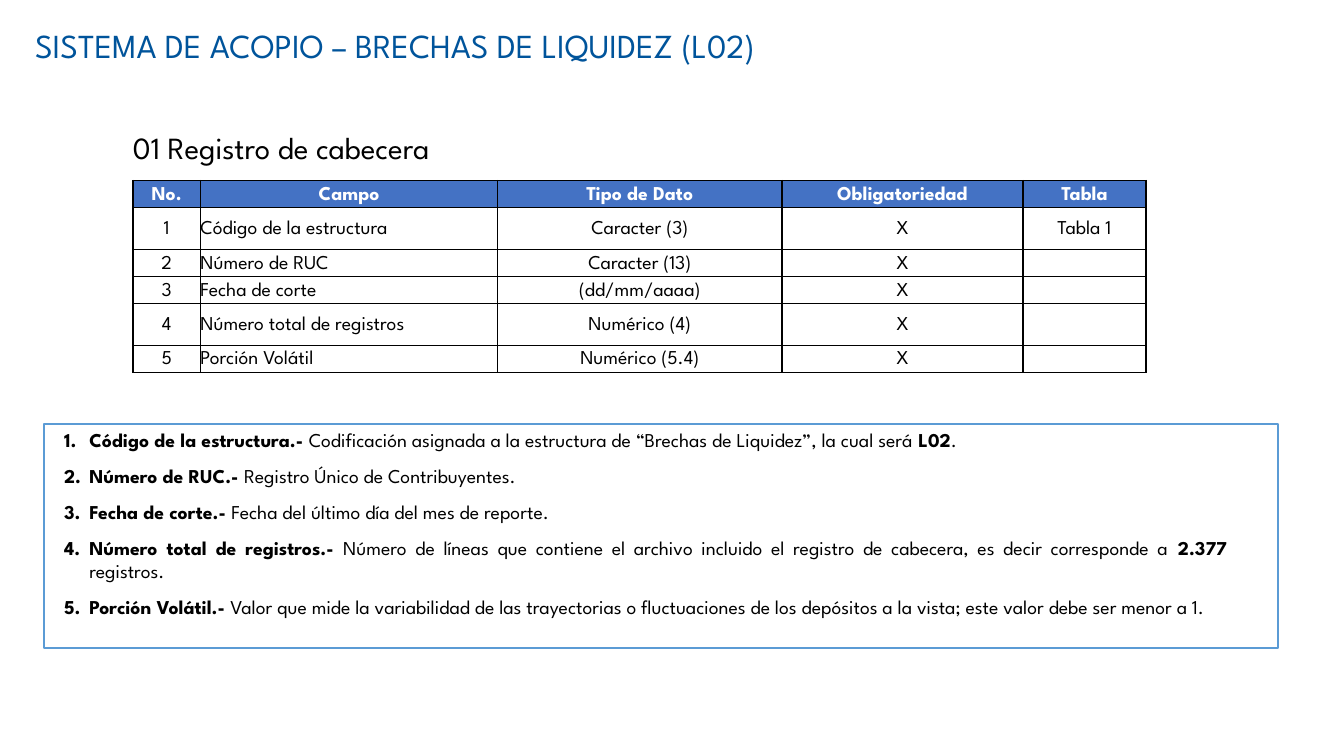
from lxml import etree
from pptx import Presentation
from pptx.dml.color import RGBColor
from pptx.enum.shapes import MSO_SHAPE
from pptx.enum.text import MSO_ANCHOR, PP_ALIGN
from pptx.oxml.ns import qn
from pptx.util import Pt

RECT = MSO_SHAPE.RECTANGLE
TOP, MIDDLE = MSO_ANCHOR.TOP, MSO_ANCHOR.MIDDLE
LEFT, CENTER, JUSTIFY = PP_ALIGN.LEFT, PP_ALIGN.CENTER, PP_ALIGN.JUSTIFY
FONT = "League Spartan"
COLORS = {"title": "00549B", "text": "000000", "head": "4472C4",
          "white": "FFFFFF", "frame": "5B9BD5"}

WIDTHS = [48.2, 212.4, 203, 172.2, 87.8]
HEIGHTS = [19.4, 30, 19.4, 19.4, 29.5, 19.4]
FIELDS = [
    ["No.", "Campo", "Tipo de Dato", "Obligatoriedad", "Tabla"],
    ["1", "Código de la estructura", "Caracter (3)", "X", "Tabla 1"],
    ["2", "Número de RUC", "Caracter (13)", "X", ""],
    ["3", "Fecha de corte", "(dd/mm/aaaa)", "X", ""],
    ["4", "Número total de registros", "Numérico (4)", "X", ""],
    ["5", "Porción Volátil", "Numérico (5.4)", "X", ""],
]
# Runs alternate between bold and regular.
NOTES = [
    ["Código de la estructura.- ",
     "Codificación asignada a la estructura de “Brechas de Liquidez”, "
     "la cual será ", "L02", "."],
    ["Número de RUC.- ", "Registro Único de Contribuyentes."],
    ["Fecha de corte.- ", "Fecha del último día del mes de reporte."],
    ["Número total de registros.- ",
     "Número de líneas que contiene el archivo incluido el registro de "
     "cabecera, es decir corresponde a ", "2.377", " registros."],
    ["Porción Volátil.- ",
     "Valor que mide la variabilidad de las trayectorias o fluctuaciones "
     "de los depósitos a la vista; este valor debe ser menor a 1."],
]


def color(name):
    return RGBColor.from_string(COLORS[name])


def style(run, size, tint="text", bold=False):
    font = run.font
    font.name, font.size, font.bold = FONT, Pt(size), bold
    font.color.rgb = color(tint)


def add_label(slide, box, text, size, tint, inset=None):
    frame = slide.shapes.add_textbox(*map(Pt, box)).text_frame
    frame.word_wrap = True
    if inset:
        (frame.margin_left, frame.margin_top,
         frame.margin_right, frame.margin_bottom) = map(Pt, inset)
    frame.text = text
    style(frame.paragraphs[0].runs[0], size, tint)


def add_border(cell):
    props = cell._tc.get_or_add_tcPr()
    for side in ("a:lnL", "a:lnR", "a:lnT", "a:lnB"):
        line = etree.SubElement(props, qn(side), w=str(Pt(1)))
        fill = etree.SubElement(line, qn("a:solidFill"))
        etree.SubElement(fill, qn("a:srgbClr"), val=COLORS["text"])


def fill_cell(cell, text, head, align):
    add_border(cell)
    if head:
        cell.fill.solid()
        cell.fill.fore_color.rgb = color("head")
    else:
        cell.fill.background()
    cell.margin_left = cell.margin_right = 0
    cell.margin_top = cell.margin_bottom = 0
    cell.vertical_anchor = MIDDLE
    para = cell.text_frame.paragraphs[0]
    para.alignment, para.line_spacing = align, 1.15
    if text:
        para.text = text
        style(para.runs[0], 14, "white" if head else "text", head)
    else:
        etree.SubElement(para._p, qn("a:endParaRPr"), sz="1400")


def add_fields(slide, left, top):
    table = slide.shapes.add_table(
        len(HEIGHTS), len(WIDTHS), Pt(left), Pt(top),
        Pt(sum(WIDTHS)), Pt(sum(HEIGHTS))).table
    table.first_row = table.horz_banding = False
    for col, width in zip(table.columns, WIDTHS):
        col.width = Pt(width)
    for r, texts in enumerate(FIELDS):
        table.rows[r].height = Pt(HEIGHTS[r])
        for c, text in enumerate(texts):
            align = LEFT if r and c == 1 else CENTER
            fill_cell(table.cell(r, c), text, r == 0, align)


def number(para):
    """Give the paragraph an automatic number and its indents."""
    props = para._p.get_or_add_pPr()
    for name, size in (("marL", 25.2), ("marR", 29.5), ("indent", -18)):
        props.set(name, str(Pt(size)))
    etree.SubElement(props, qn("a:buFont"), typeface="+mj-lt")
    etree.SubElement(props, qn("a:buAutoNum"), type="arabicPeriod")


def add_notes(slide, box):
    shape = slide.shapes.add_shape(RECT, *map(Pt, box))
    shape.shadow.inherit = False
    shape.fill.solid()
    shape.fill.fore_color.rgb = color("white")
    shape.line.color.rgb = color("frame")
    shape.line.width = Pt(1.5)
    frame = shape.text_frame
    frame.word_wrap, frame.vertical_anchor = True, TOP
    for i, texts in enumerate(NOTES):
        para = frame.add_paragraph() if i else frame.paragraphs[0]
        para.alignment, para.line_spacing = JUSTIFY, 0.98
        para.space_before = Pt(9.2 if i else 0)
        number(para)
        for j, text in enumerate(texts):
            run = para.add_run()
            run.text = text
            style(run, 14, bold=j % 2 == 0)


def main():
    deck = Presentation()
    deck.slide_width, deck.slide_height = Pt(960), Pt(540)
    slide = deck.slides.add_slide(deck.slide_layouts[6])
    add_label(slide, (18, 14.4, 737.3, 36),
              "SISTEMA DE ACOPIO – BRECHAS DE LIQUIDEZ (L02)", 24, "title")
    add_label(slide, (95, 92.2, 416.9, 36.7), "01 Registro de cabecera",
              22, "text", (0, 0, 9.4, 0))
    add_fields(slide, 95, 128.9)
    add_notes(slide, (31.5, 303, 881.5, 160))
    deck.save("out.pptx")


if __name__ == "__main__":
    main()
